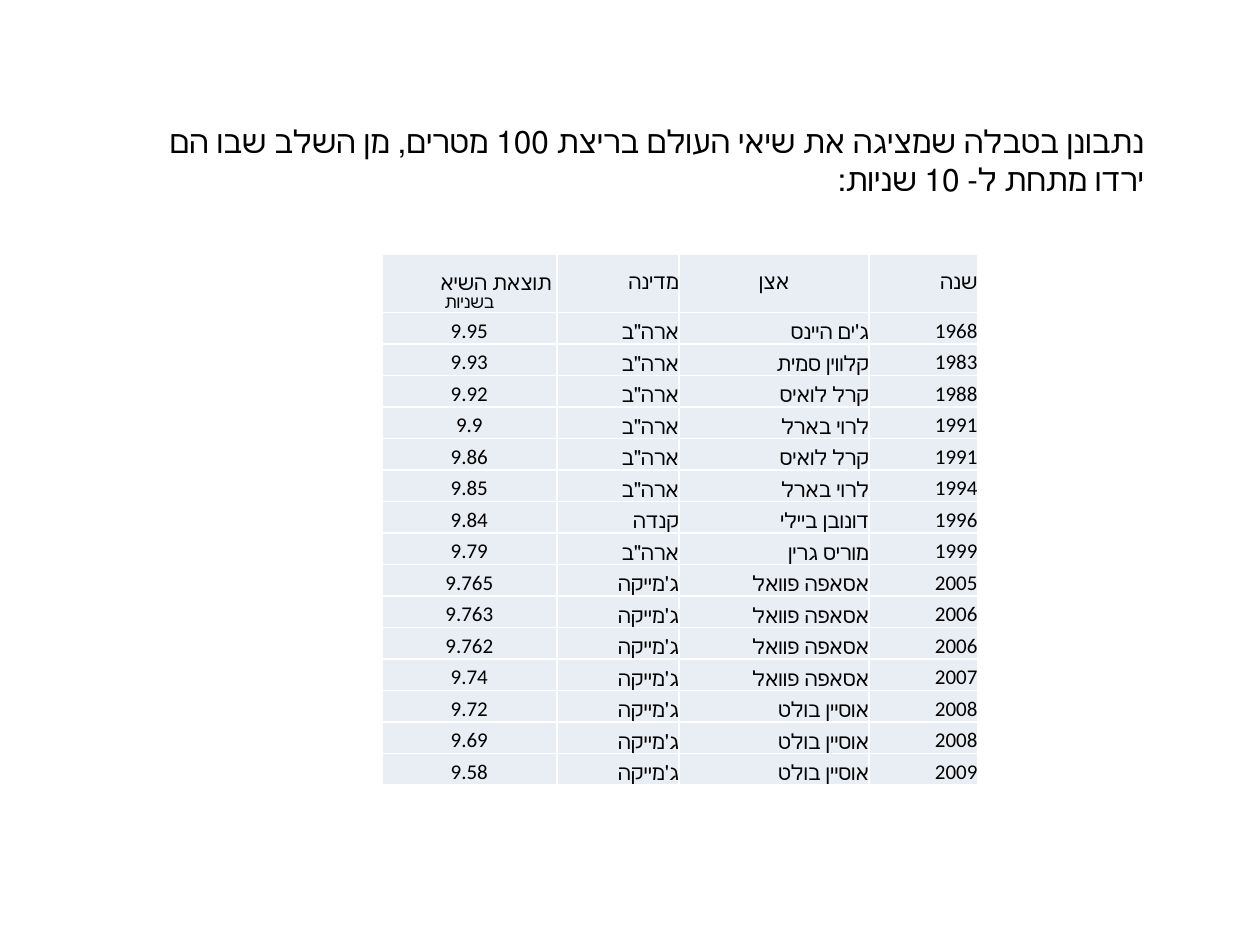
"""Build a slide with a table of the 100 metre world records."""
import lxml.etree
import pptx
import pptx.dml.color
import pptx.enum.text
import pptx.oxml.ns
import pptx.util

Pt = pptx.util.Pt
ALIGN = pptx.enum.text.PP_ALIGN
ANCHOR = pptx.enum.text.MSO_ANCHOR
COLORS = {"text": "000000", "cell": "E9EDF4", "border": "FFFFFF"}
FONT = "Calibri"

INTRO = "נתבונן בטבלה שמציגה את שיאי העולם בריצת 100 מטרים, מן השלב שבו הם ירדו מתחת ל- 10 שניות:"
HEADERS = [" תוצאת השיא\nבשניות", "מדינה", "אצן", "שנה"]
RECORDS = [
    ("9.95", "ארה\"ב", "ג'ים היינס", "1968"),
    ("9.93", "ארה\"ב", "קלווין סמית", "1983"),
    ("9.92", "ארה\"ב", "קרל לואיס", "1988"),
    ("9.9", "ארה\"ב", "לרוי בארל", "1991"),
    ("9.86", "ארה\"ב", "קרל לואיס", "1991"),
    ("9.85", "ארה\"ב", "לרוי בארל", "1994"),
    ("9.84", "קנדה", "דונובן ביילי", "1996"),
    ("9.79", "ארה\"ב", "מוריס גרין", "1999"),
    ("9.765", "ג'מייקה", "אסאפה פוואל", "2005"),
    ("9.763", "ג'מייקה", "אסאפה פוואל", "2006"),
    ("9.762", "ג'מייקה", "אסאפה פוואל", "2006"),
    ("9.74", "ג'מייקה", "אסאפה פוואל", "2007"),
    ("9.72", "ג'מייקה", "אוסיין בולט", "2008"),
    ("9.69", "ג'מייקה", "אוסיין בולט", "2008"),
    ("9.58", "ג'מייקה", "אוסיין בולט", "2009"),
]
COLUMN_WIDTHS = [100, 69.8, 108.7, 61.9]
HEADER_HEIGHT, ROW_HEIGHT = 33.1, 18


def rgb(name):
    return pptx.dml.color.RGBColor.from_string(COLORS[name])


def format_paragraph(p, size, align, rtl, space=None):
    p.alignment = align
    if rtl:
        p._p.get_or_add_pPr().set("rtl", "1")
    if space is not None:
        p.space_before = p.space_after = Pt(space)
    for r in p.runs:
        r.font.name = FONT
        r.font.size = Pt(size)
        r.font.color.rgb = rgb("text")


def add_intro(s):
    sp = s.shapes.add_textbox(Pt(65.5), Pt(66.2), Pt(595.4), Pt(51.1))
    tf = sp.text_frame
    tf.word_wrap = True
    tf.auto_size = pptx.enum.text.MSO_AUTO_SIZE.SHAPE_TO_FIT_TEXT
    tf.text = INTRO
    format_paragraph(tf.paragraphs[0], 18, ALIGN.RIGHT, True)


def add_borders(cell):
    tcPr = cell._tc.get_or_add_tcPr()
    for i, side in enumerate(("lnL", "lnR", "lnT", "lnB")):
        ln = lxml.etree.Element(pptx.oxml.ns.qn(f"a:{side}"), w=str(Pt(1)))
        fill = lxml.etree.SubElement(ln, pptx.oxml.ns.qn("a:solidFill"))
        lxml.etree.SubElement(fill, pptx.oxml.ns.qn("a:srgbClr"), val=COLORS["border"])
        tcPr.insert(i, ln)


def fill_cell(cell, text, anchor):
    cell.text_frame.text = text
    cell.margin_left = cell.margin_right = cell.margin_top = cell.margin_bottom = 0
    cell.vertical_anchor = anchor
    cell.fill.solid()
    cell.fill.fore_color.rgb = rgb("cell")
    add_borders(cell)


def fill_header(table):
    for col, text in enumerate(HEADERS):
        cell = table.cell(0, col)
        fill_cell(cell, text, ANCHOR.BOTTOM if col == 0 else ANCHOR.MIDDLE)
        for i, p in enumerate(cell.text_frame.paragraphs):
            align = ALIGN.CENTER if col == 2 or i == 1 else ALIGN.RIGHT
            format_paragraph(p, 10 if i == 1 else 12, align, True)


def fill_records(table):
    for row, record in enumerate(RECORDS, 1):
        for col, text in enumerate(record):
            cell = table.cell(row, col)
            fill_cell(cell, text, ANCHOR.BOTTOM)
            align = ALIGN.CENTER if col == 0 else ALIGN.RIGHT
            format_paragraph(cell.text_frame.paragraphs[0], 12, align, col in (1, 2), 2)


def add_records_table(s):
    heights = [HEADER_HEIGHT] + [ROW_HEIGHT] * len(RECORDS)
    table = s.shapes.add_table(len(heights), len(HEADERS), Pt(218.2), Pt(145.4),
                               Pt(sum(COLUMN_WIDTHS)), Pt(sum(heights))).table
    table.first_row = table.horz_banding = False
    for column, width in zip(table.columns, COLUMN_WIDTHS):
        column.width = Pt(width)
    for row, height in zip(table.rows, heights):
        row.height = Pt(height)
    fill_header(table)
    fill_records(table)


def main():
    prs = pptx.Presentation()
    prs.slide_width, prs.slide_height = Pt(720), Pt(540)
    s = prs.slides.add_slide(prs.slide_layouts[6])
    add_intro(s)
    add_records_table(s)
    prs.save("out.pptx")


if __name__ == "__main__":
    main()
